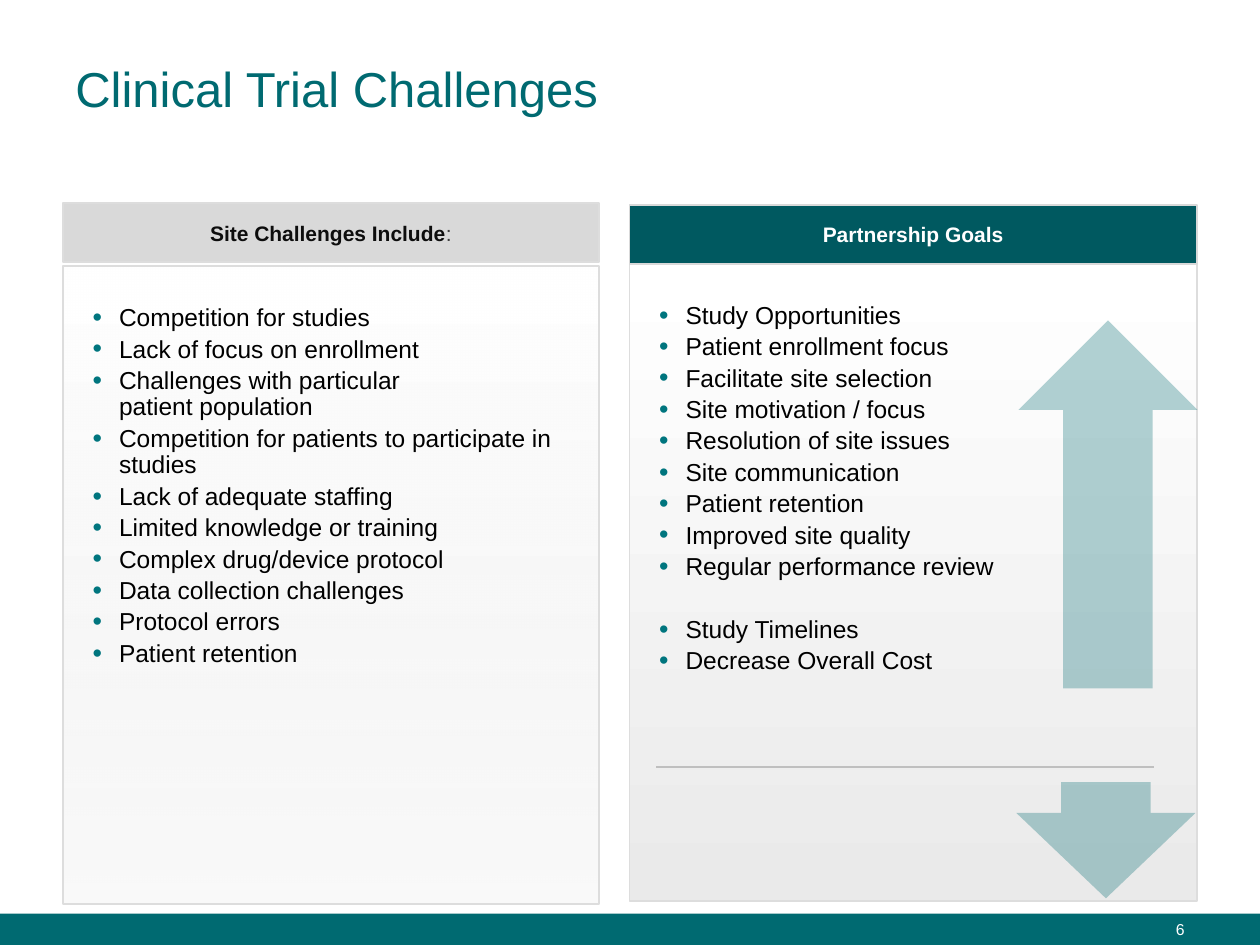
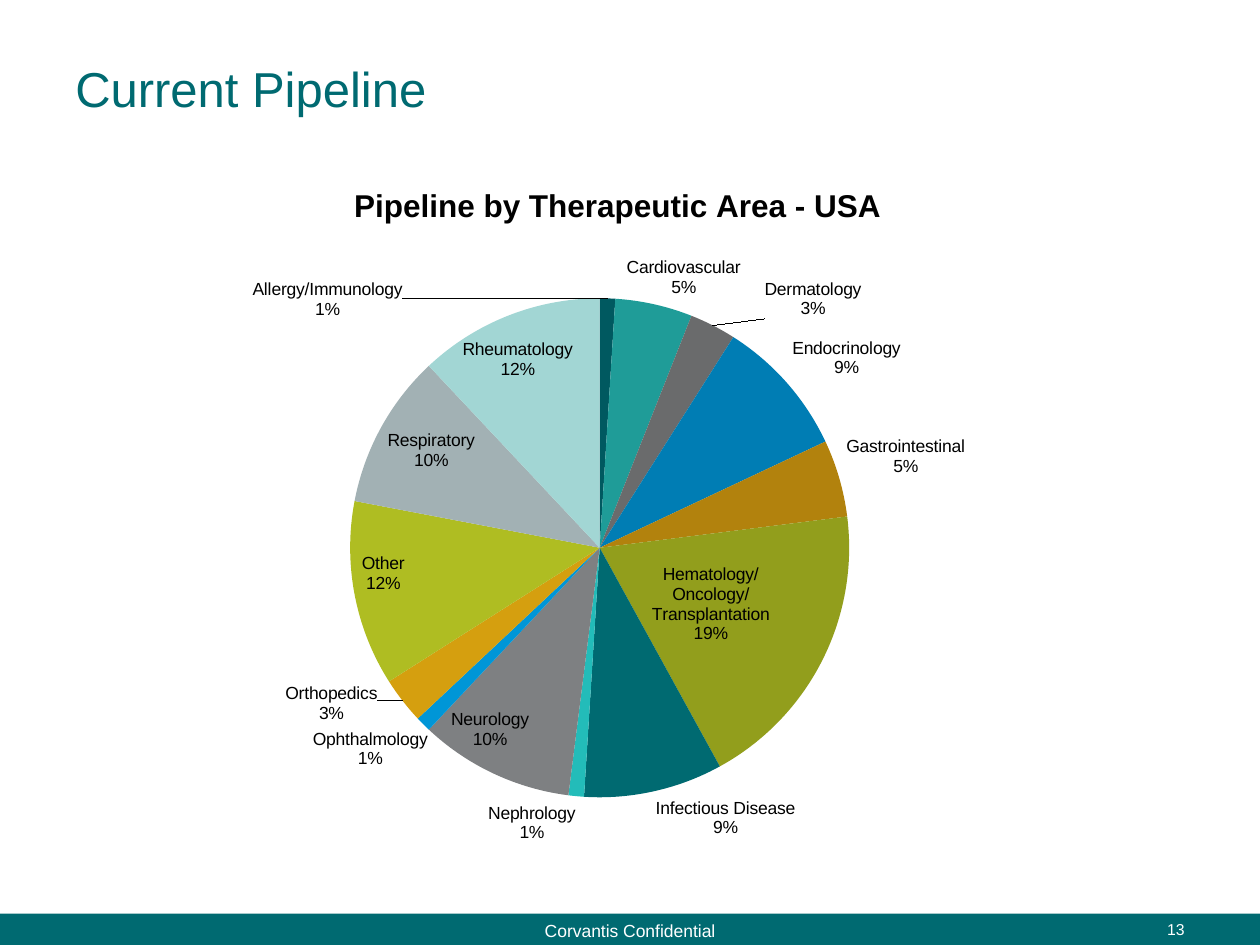
from lxml import etree
from pptx import Presentation
from pptx.chart.data import CategoryChartData
from pptx.dml.color import RGBColor
from pptx.enum.chart import XL_CHART_TYPE
from pptx.enum.shapes import MSO_CONNECTOR, MSO_SHAPE
from pptx.enum.text import MSO_ANCHOR, PP_ALIGN
from pptx.oxml import parse_xml
from pptx.oxml.ns import nsdecls, qn
from pptx.util import Cm, Pt

RECT, UP, DOWN = MSO_SHAPE.RECTANGLE, MSO_SHAPE.UP_ARROW, MSO_SHAPE.DOWN_ARROW
LEFT, CENTER, RIGHT = PP_ALIGN.LEFT, PP_ALIGN.CENTER, PP_ALIGN.RIGHT
TOP, MIDDLE = MSO_ANCHOR.TOP, MSO_ANCHOR.MIDDLE
STRAIGHT, PIE = MSO_CONNECTOR.STRAIGHT, XL_CHART_TYPE.PIE

# Shared style
FONT = "Arial"
TEAL, DARK_TEAL, BULLET_TEAL = "006A71", "005960", "00757E"
WHITE, BLACK, BORDER, FADE = "FFFFFF", "000000", "DDDDDD", "EAEAEA"
DEFAULT_INSETS = (0.25, 0.13, 0.25, 0.13)
FOOTER_TOP, FOOTER_HEIGHT = 18.42, 0.64

# Slide 1 content; boxes are left, top, width, height in cm
PANELS = [
    {"heading": [("Site Challenges Include", "0D0D0D", True), (":", "404040", False)],
     "heading_fill": "D9D9D9", "heading_line": BORDER, "fade_opacity": 25,
     "left": 1.27, "width": 10.8, "heading_top": 4.1, "body_top": 5.37,
     "groups": [["Competition for studies", "Lack of focus on enrollment",
                 "Challenges with particular \vpatient population",
                 "Competition for patients to participate in studies",
                 "Lack of adequate staffing", "Limited knowledge or training",
                 "Complex drug/device protocol", "Data collection challenges",
                 "Protocol errors", "Patient retention"]]},
    {"heading": [("Partnership Goals", WHITE, True)],
     "heading_fill": DARK_TEAL, "heading_line": "D9D9D9", "fade_opacity": 100,
     "left": 12.69, "width": 11.44, "heading_top": 4.13, "body_top": 5.32,
     "groups": [["Study Opportunities", "Patient enrollment focus",
                 "Facilitate site selection", "Site motivation / focus",
                 "Resolution of site issues", "Site communication",
                 "Patient retention", "Improved site quality",
                 "Regular performance review"],
                ["Study Timelines", "Decrease Overall Cost"]]},
]
HEADING_HEIGHT, BODY_HEIGHT = 1.19, 12.85
ARROWS = [(UP, (20.53, 6.46, 3.61, 7.42), (0.5, 0.5)),
          (DOWN, (20.49, 15.77, 3.61, 2.34), (0.5, 0.735))]
DIVIDER = (13.23, 15.46, 23.27, 15.46)

# Slide 2 content: area, share, colour, label position, label shift
CHART_TITLE = "Pipeline by Therapeutic Area - USA"
PIPELINE = [
    ("Allergy/Immunology", 1, "005960", "outEnd", (-0.29, 0.04)),
    ("Cardiovascular", 5, "1F9C98", "outEnd", (-0.03, 0)),
    ("Dermatology", 3, "6A6B6C", "outEnd", (0.05, 0)),
    ("Endocrinology", 9, "007DB4", "outEnd", None),
    ("Gastrointestinal", 5, "B2820D", "outEnd", None),
    ("Hematology/Oncology/Transplantation", 19, "929E1C", "ctr", None),
    ("Infectious Disease", 9, "006A71", "outEnd", None),
    ("Nephrology", 1, "23BCB9", "outEnd", None),
    ("Neurology", 10, "7E8082", "outEnd", (0.04, -0.1)),
    ("Ophthalmology", 1, "0096D7", "outEnd", (0.01, 0)),
    ("Orthopedics", 3, "D59F0F", "outEnd", (-0.02, -0.03)),
    ("Other", 12, "AFBD22", "inEnd", None),
    ("Respiratory", 10, "A2B1B4", "inEnd", None),
    ("Rheumatology", 12, "A2D6D4", "outEnd", (0.07, 0.1)),
]
CHART_BOX = (2.74, 3.18, 19.48, 14.17)


def rgb(value):
    return RGBColor.from_string(value)


def set_all(target, values):
    for name, value in values.items():
        setattr(target, name, value)


def set_font(font, size, color, bold=False):
    set_all(font, {"name": FONT, "size": Pt(size), "bold": bold})
    font.color.rgb = rgb(color)


def set_opacity(color_parent, percent):
    color = color_parent.find(qn("a:srgbClr"))
    etree.SubElement(color, qn("a:alpha"), val=str(percent * 1000))


def set_frame(frame, insets=DEFAULT_INSETS, anchor=TOP):
    sides = ("margin_left", "margin_top", "margin_right", "margin_bottom")
    set_all(frame, dict(zip(sides, map(Cm, insets))))
    set_all(frame, {"word_wrap": True, "vertical_anchor": anchor})


def add_runs(paragraph, runs, size):
    for text, color, bold in runs:
        run = paragraph.add_run()
        run.text = text
        set_font(run.font, size, color, bold)


def add_text(slide, box, text, size, color, align=LEFT, anchor=TOP):
    frame = slide.shapes.add_textbox(*map(Cm, box)).text_frame
    set_frame(frame, anchor=anchor)
    frame.paragraphs[0].alignment = align
    add_runs(frame.paragraphs[0], [(text, color, False)], size)


def add_block(slide, kind, box, fill=None, line=None):
    block = slide.shapes.add_shape(kind, *map(Cm, box))
    block.shadow.inherit = False
    if fill:
        block.fill.solid()
        block.fill.fore_color.rgb = rgb(fill)
    if line:
        block.line.color.rgb = rgb(line)
        block.line.width = Pt(1)
    else:
        block.line.fill.background()
    return block


def add_slide(prs, title, number):
    slide = prs.slides.add_slide(prs.slide_layouts[6])
    add_block(slide, RECT, (0, FOOTER_TOP, 25.4, FOOTER_HEIGHT), TEAL)
    add_text(slide, (18.21, FOOTER_TOP, 5.92, FOOTER_HEIGHT), number, 9, WHITE, RIGHT, MIDDLE)
    add_text(slide, (1.27, 1.05, 16.71, 2.74), title, 28, TEAL)
    return slide


def add_bullet(paragraph, text, space_before):
    set_all(paragraph, {"alignment": LEFT, "line_spacing": 0.9,
                        "space_after": Pt(2.8), "space_before": Pt(space_before)})
    props = paragraph._p.get_or_add_pPr()
    props.set("marL", str(Cm(0.53)))
    props.set("indent", str(Cm(-0.53)))
    color = etree.SubElement(props, qn("a:buClr"))
    etree.SubElement(color, qn("a:srgbClr"), val=BULLET_TEAL)
    etree.SubElement(props, qn("a:buSzPct"), val="110000")
    etree.SubElement(props, qn("a:buFont"), typeface=FONT)
    etree.SubElement(props, qn("a:buChar"), char="•")
    paragraph.text = text
    set_font(paragraph.font, 14, BLACK)
    for run in paragraph.runs:
        set_font(run.font, 14, BLACK)


def add_panel(slide, panel):
    left, width = panel["left"], panel["width"]

    # Body with fading fill and bullets
    body = add_block(slide, RECT, (left, panel["body_top"], width, BODY_HEIGHT), line=BORDER)
    body.fill.gradient()
    body.fill.gradient_angle = 270
    for stop, color in zip(body.fill.gradient_stops, (WHITE, FADE)):
        stop.color.rgb = rgb(color)
    if panel["fade_opacity"] < 100:
        last_stop = body._element.spPr.findall(".//" + qn("a:gs"))[-1]
        set_opacity(last_stop, panel["fade_opacity"])
    frame = body.text_frame
    set_frame(frame, (0.6, 0.79, 0.1, 0.2))
    paragraph = frame.paragraphs[0]
    for g, group in enumerate(panel["groups"]):
        for i, text in enumerate(group):
            if g or i:
                paragraph = frame.add_paragraph()
            add_bullet(paragraph, text, 18 if g and not i else 0)

    # Heading band
    heading = add_block(slide, RECT, (left, panel["heading_top"], width, HEADING_HEIGHT),
                        panel["heading_fill"], panel["heading_line"])
    set_frame(heading.text_frame, (0, 0, 0, 0), MIDDLE)
    paragraph = heading.text_frame.paragraphs[0]
    paragraph.alignment = CENTER
    add_runs(paragraph, panel["heading"], 12)


def layout_xml(values, edges=False):
    modes = '<c:xMode val="edge"/><c:yMode val="edge"/>' if edges else ""
    target = '<c:layoutTarget val="inner"/>' if len(values) == 4 else ""
    parts = "".join(f'<c:{k} val="{v}"/>' for k, v in zip("xywh", values))
    return (f'<c:layout {nsdecls("c")}><c:manualLayout>{target}{modes}{parts}'
            '</c:manualLayout></c:layout>')


def place(parent, values, position):
    for old in parent.findall(qn("c:layout")):
        parent.remove(old)
    parent.insert(position, parse_xml(layout_xml(values, True)))


def label_xml(index, position, shift):
    shows = {"LegendKey": 0, "Val": 0, "CatName": 1, "SerName": 0, "Percent": 1, "BubbleSize": 0}
    flags = "".join(f'<c:show{k} val="{v}"/>' for k, v in shows.items())
    return (f'<c:dLbl {nsdecls("c")}><c:idx val="{index}"/>'
            f'{layout_xml(shift) if shift else ""}<c:dLblPos val="{position}"/>{flags}'
            '<c:separator>\n</c:separator></c:dLbl>')


def add_pipeline_chart(slide):
    data = CategoryChartData()
    data.categories = [row[0] for row in PIPELINE]
    data.add_series("Series 1", [row[1] for row in PIPELINE])
    chart = slide.shapes.add_chart(PIE, *map(Cm, CHART_BOX), data).chart
    chart.has_legend = False
    set_font(chart.font, 10, BLACK)

    # Title and pie position
    chart.has_title = True
    add_runs(chart.chart_title.text_frame.paragraphs[0], [(CHART_TITLE, BLACK, True)], 18)
    place(chart.chart_title._element, (0.22, 0.03), 1)
    place(chart._chartSpace.chart.plotArea, (0.22, 0.2, 0.52, 0.71), 0)

    # Slices and their labels
    chart.plots[0].vary_by_categories = True
    series = chart.plots[0].series[0]
    labels = series.data_labels
    set_all(labels, {"show_value": False, "show_category_name": True, "show_percentage": True})
    set_font(labels.font, 10, BLACK)
    for i, (_, _, color, position, shift) in enumerate(PIPELINE):
        fill = series.points[i].format.fill
        fill.solid()
        fill.fore_color.rgb = rgb(color)
        labels._element.insert(i, parse_xml(label_xml(i, position, shift)))


def main():
    prs = Presentation()
    prs.slide_width, prs.slide_height = Cm(25.4), Cm(19.05)

    # Challenges and goals
    challenges = add_slide(prs, "Clinical Trial Challenges", "6")
    for panel in PANELS:
        add_panel(challenges, panel)
    for kind, box, adjustments in ARROWS:
        arrow = add_block(challenges, kind, box, TEAL)
        for i, value in enumerate(adjustments):
            arrow.adjustments[i] = value
        set_opacity(arrow._element.spPr.find(qn("a:solidFill")), 30)
    divider = challenges.shapes.add_connector(STRAIGHT, *map(Cm, DIVIDER))
    divider.line.color.rgb = rgb("BFBFBF")
    divider.line.width = Pt(1)
    etree.SubElement(divider._element.spPr, qn("a:effectLst"))

    # Pipeline
    pipeline = add_slide(prs, "Current Pipeline", "13")
    add_text(pipeline, (0, FOOTER_TOP, 25.4, FOOTER_HEIGHT),
             "Corvantis Confidential", 10, WHITE, CENTER)
    add_pipeline_chart(pipeline)

    prs.save("out.pptx")


if __name__ == "__main__":
    main()
